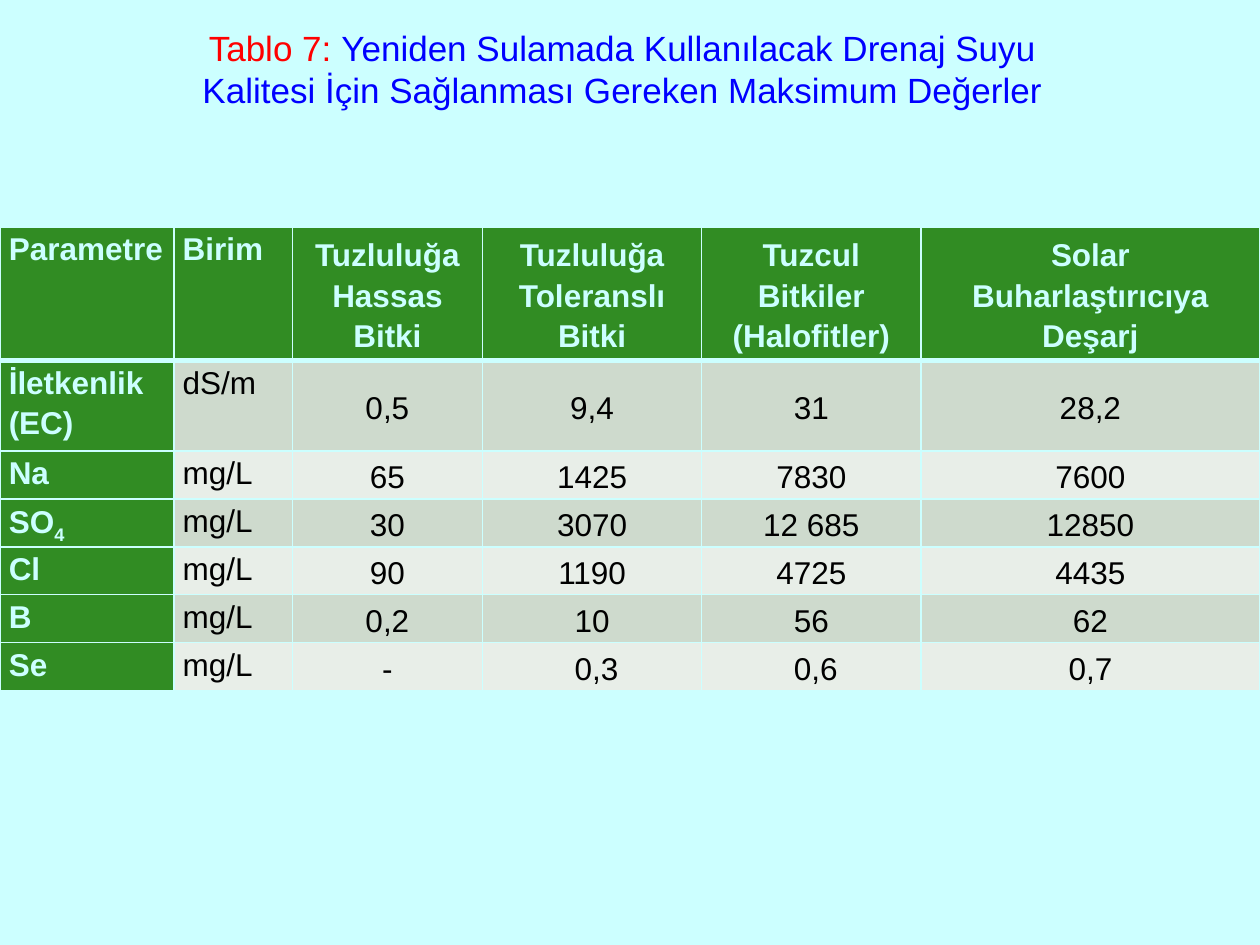
import pptx
import pptx.dml.color
import pptx.enum.text
import pptx.oxml
import pptx.oxml.ns
import pptx.util

Inches = pptx.util.Inches
Pt = pptx.util.Pt
RGBColor = pptx.dml.color.RGBColor
PP_ALIGN = pptx.enum.text.PP_ALIGN
MSO_ANCHOR = pptx.enum.text.MSO_ANCHOR

PALE_CYAN = RGBColor(0xCC, 0xFF, 0xFF)
GREEN = RGBColor(0x31, 0x8C, 0x23)
DARK_BAND = RGBColor(0xCE, 0xDA, 0xCD)
LIGHT_BAND = RGBColor(0xE8, 0xEE, 0xE8)
BLACK = RGBColor(0, 0, 0)
RED = RGBColor(0xFF, 0, 0)
BLUE = RGBColor(0, 0, 0xFF)

TITLE_LINES = [
    [("Tablo 7: ", RED), ("Yeniden Sulamada Kullanılacak Drenaj Suyu", BLUE)],
    [("Kalitesi İçin Sağlanması Gereken Maksimum Değerler", BLUE)],
]
COLUMN_WIDTHS = [1.38, 0.94, 1.51, 1.74, 1.74, 2.69]
ROW_HEIGHTS = [1.06, 0.72] + [0.38] * 5
HEADINGS = [
    "Parametre", "Birim", "Tuzluluğa Hassas\nBitki", "Tuzluluğa Toleranslı Bitki",
    "Tuzcul Bitkiler (Halofitler)", "Solar Buharlaştırıcıya Deşarj",
]
LIMITS = [
    ["İletkenlik (EC)", "dS/m", "0,5", "9,4", "31", "28,2"],
    ["Na", "mg/L", "65", "1425", "7830", "7600"],
    ["SO4", "mg/L", "30", "3070", "12 685", "12850"],
    ["Cl", "mg/L", "90", "1190", "4725", "4435"],
    ["B", "mg/L", "0,2", "10", "56", "62"],
    ["Se", "mg/L", "-", " 0,3", " 0,6", "0,7"],
]
CELL_FORMAT = {
    "margin_left": Inches(0.07), "margin_right": Inches(0.07),
    "margin_top": 0, "margin_bottom": 0,
}


def apply_format(target, values):
    for name, value in values.items():
        setattr(target, name, value)


def add_span(para, text, color, size, bold):
    span = para.add_run()
    span.text = text
    apply_format(span.font, {"name": "Arial", "size": Pt(size), "bold": bold})
    span.font.color.rgb = color
    return span


def add_title(page, left, top, width, height):
    title = page.shapes.title
    apply_format(title, {"left": left, "top": top, "width": width, "height": height})
    frame = title.text_frame
    apply_format(frame, {
        "word_wrap": True,
        "auto_size": pptx.enum.text.MSO_AUTO_SIZE.NONE,
        "vertical_anchor": MSO_ANCHOR.TOP,
    })
    for index, line in enumerate(TITLE_LINES):
        para = frame.add_paragraph() if index else frame.paragraphs[0]
        apply_format(para, {"alignment": PP_ALIGN.CENTER, "space_before": Pt(0)})
        for text, color in line:
            add_span(para, text, color, 20, False)


def set_borders(cell, row):
    weights = {"L": 1, "R": 1, "T": 3 if row == 1 else 1, "B": 3 if row == 0 else 1}
    properties = cell._tc.get_or_add_tcPr()
    for index, (side, weight) in enumerate(weights.items()):
        properties.insert(index, pptx.oxml.parse_xml(
            f'<a:ln{side} {pptx.oxml.ns.nsdecls("a")} w="{Pt(weight)}">'
            f'<a:solidFill><a:srgbClr val="{PALE_CYAN}"/></a:solidFill></a:ln{side}>'
        ))


def fill_cell(cell, text, row, column):
    heading = row == 0 or column == 0
    label = column < 2
    cell.fill.solid()
    cell.fill.fore_color.rgb = GREEN if heading else (DARK_BAND if row % 2 else LIGHT_BAND)
    set_borders(cell, row)
    apply_format(cell, CELL_FORMAT)
    cell.vertical_anchor = MSO_ANCHOR.TOP if label else MSO_ANCHOR.MIDDLE
    color = PALE_CYAN if heading else BLACK
    for index, line in enumerate(text.split("\n")):
        para = cell.text_frame.add_paragraph() if index else cell.text_frame.paragraphs[0]
        apply_format(para, {
            "alignment": PP_ALIGN.JUSTIFY if label else PP_ALIGN.CENTER,
            "line_spacing": 1.15,
        })
        if line == "SO4":
            add_span(para, "SO", color, 18, heading)
            subscript = add_span(para, "4", color, 18, heading)
            subscript._r.get_or_add_rPr().set("baseline", "-25000")
        else:
            add_span(para, line, color, 18, heading)


def add_limits_table(page, left, top, width, height):
    rows = [HEADINGS] + LIMITS
    table = page.shapes.add_table(len(rows), len(HEADINGS), left, top, width, height).table
    for column, size in zip(table.columns, COLUMN_WIDTHS):
        column.width = Inches(size)
    for row, size in zip(table.rows, ROW_HEIGHTS):
        row.height = Inches(size)
    for row, texts in enumerate(rows):
        for column, text in enumerate(texts):
            fill_cell(table.cell(row, column), text, row, column)


def main():
    deck = pptx.Presentation()
    deck.slide_width, deck.slide_height = Inches(10), Inches(7.5)
    page = deck.slides.add_slide(deck.slide_layouts.get_by_name("Title Only"))
    page.background.fill.solid()
    page.background.fill.fore_color.rgb = PALE_CYAN
    add_title(page, Inches(0.27), Inches(0.16), Inches(9.34), Inches(0.77))
    add_limits_table(page, Inches(0), Inches(1.8), Inches(10), Inches(3.67))
    deck.save("out.pptx")


if __name__ == "__main__":
    main()
